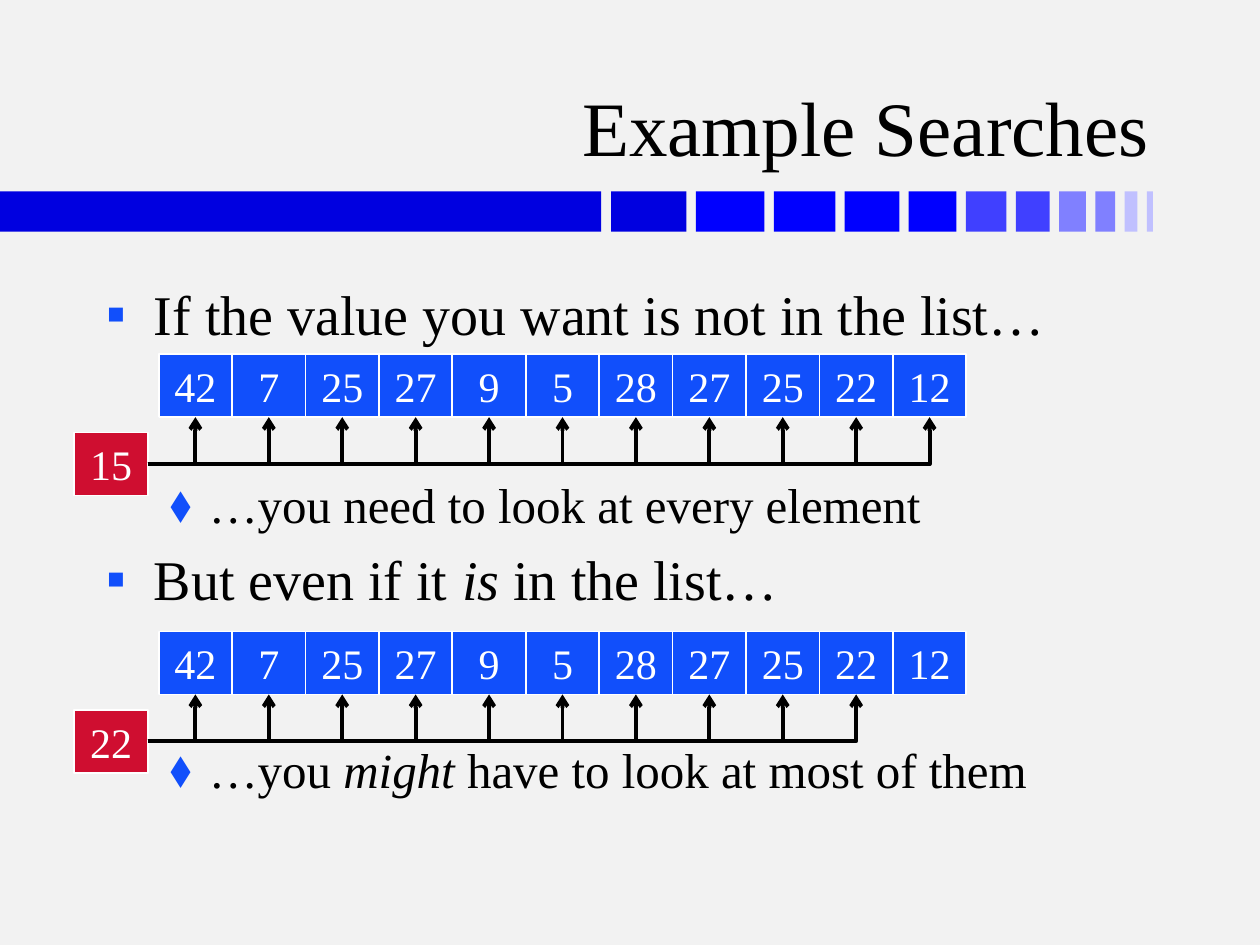
from dataclasses import dataclass

from lxml.etree import SubElement
from pptx import Presentation
from pptx.dml.color import RGBColor
from pptx.enum.shapes import MSO_CONNECTOR, MSO_SHAPE
from pptx.enum.text import MSO_ANCHOR, PP_ALIGN
from pptx.oxml.ns import qn
from pptx.util import Cm, Pt


@dataclass(frozen=True)
class Theme:
    font: str = "Times New Roman"
    background: str = "F2F2F2"
    ink: str = "000000"
    light: str = "FFFFFF"
    cell: str = "114FFB"
    key: str = "CF0E30"
    bar: str = "0000E0"
    fade: tuple = ("0000E0",) + ("0000FF",) * 4 + ("4040FF",) * 2 + ("8080FF",) * 2 + ("C0C0FF",) * 2
    title_size: int = 44
    item_sizes: tuple = (32, 28)
    cell_size: int = 24
    border_width: float = 1
    arrow_width: float = 2.25


class SlideBuilder:
    def __init__(self, page, theme):
        self.page = page
        self.theme = theme
        fill = page.background.fill
        fill.solid()
        fill.fore_color.rgb = RGBColor.from_string(theme.background)

    def style_font(self, para, size, color):
        para.font.name = self.theme.font
        para.font.size = Pt(size)
        para.font.color.rgb = RGBColor.from_string(color)

    def rectangle(self, left, top, width, height, color):
        box = self.page.shapes.add_shape(
            MSO_SHAPE.RECTANGLE, Cm(left), Cm(top), Cm(width), Cm(height))
        box.shadow.inherit = False
        box.fill.solid()
        box.fill.fore_color.rgb = RGBColor.from_string(color)
        box.line.fill.background()
        return box

    def number_box(self, left, top, value, color):
        box = self.rectangle(left, top, CELL_WIDTH, CELL_HEIGHT, color)
        box.line.color.rgb = RGBColor.from_string(self.theme.light)
        box.line.width = Pt(self.theme.border_width)
        frame = box.text_frame
        frame.word_wrap = False
        frame.vertical_anchor = MSO_ANCHOR.MIDDLE
        para = frame.paragraphs[0]
        para.text = str(value)
        para.alignment = PP_ALIGN.CENTER
        self.style_font(para, self.theme.cell_size, self.theme.light)
        return box

    def text_frame(self, left, top, width, height):
        box = self.page.shapes.add_textbox(Cm(left), Cm(top), Cm(width), Cm(height))
        box.text_frame.word_wrap = True
        return box.text_frame

    def title(self, text):
        frame = self.text_frame(1.88, 0.48, 21.54, 3.12)
        frame.vertical_anchor = MSO_ANCHOR.BOTTOM
        para = frame.paragraphs[0]
        para.text = text
        para.alignment = PP_ALIGN.RIGHT
        self.style_font(para, self.theme.title_size, self.theme.ink)

    def bullets(self, items):
        frame = self.text_frame(1.9, 5.51, 21.6, 11.43)
        for index, (level, space, spans) in enumerate(items):
            para = frame.add_paragraph() if index else frame.paragraphs[0]
            para.level = level
            para.space_before = Pt(space)
            self.style_font(para, self.theme.item_sizes[level], self.theme.ink)
            for position, text in enumerate(spans):
                span = para.add_run()
                span.text = text
                if position % 2:
                    span.font.italic = True
            self.bullet_mark(para, level)

    def bullet_mark(self, para, level):
        margin, indent, mark = ((0.95, -0.95, "▪"), (2.06, -0.79, "⬧"))[level]
        properties = para._p.get_or_add_pPr()
        properties.set("marL", str(Cm(margin)))
        properties.set("indent", str(Cm(indent)))
        color = SubElement(properties, qn("a:buClr"))
        SubElement(color, qn("a:srgbClr"), val=self.theme.cell)
        SubElement(properties, qn("a:buFont"), typeface=self.theme.font)
        SubElement(properties, qn("a:buChar"), char=mark)
        defaults = properties.find(qn("a:defRPr"))
        if defaults is not None:
            properties.append(defaults)

    def arrow(self, source, target):
        link = self.page.shapes.add_connector(MSO_CONNECTOR.ELBOW, 0, 0, 0, 0)
        link.begin_connect(source, 3)
        link.end_connect(target, 2)
        link.line.color.rgb = RGBColor.from_string(self.theme.ink)
        link.line.width = Pt(self.theme.arrow_width)
        properties = link._element.spPr
        properties.find(qn("a:prstGeom")).set("prst", "bentConnector2")
        SubElement(properties.find(qn("a:ln")), qn("a:tailEnd"), type="arrow")
        SubElement(properties, qn("a:effectLst"))

    def fading_bar(self):
        top, height, gap = 3.86, 0.81, 0.19
        self.rectangle(0, top, 12.12, height, self.theme.bar)
        left = 12.32
        for index, color in enumerate(self.theme.fade):
            width = 1.52 - 0.14 * index
            self.rectangle(left, top, width, height, color)
            left += width + gap

    def search(self, top, key, values, steps):
        cells = [self.number_box(3.2 + CELL_WIDTH * index, top, value, self.theme.cell)
                 for index, value in enumerate(values)]
        key_box = self.number_box(1.5, top + 1.58, key, self.theme.key)
        for cell in cells[:steps]:
            self.arrow(key_box, cell)


CELL_WIDTH, CELL_HEIGHT = 1.48, 1.27
VALUES = (42, 7, 25, 27, 9, 5, 28, 27, 25, 22, 12)
ITEM_SPACE, DIAGRAM_SPACE = 6.4, 73
ITEMS = (
    (0, ITEM_SPACE, ("If the value you want is not in the list…",)),
    (1, DIAGRAM_SPACE, ("…you need to look at every element",)),
    (0, ITEM_SPACE, ("But even if it ", "is", " in the list…")),
    (1, DIAGRAM_SPACE, ("…you ", "might", " have to look at most of them")),
)


def main():
    deck = Presentation()
    deck.slide_width, deck.slide_height = Cm(25.4), Cm(19.05)
    builder = SlideBuilder(deck.slides.add_slide(deck.slide_layouts[6]), Theme())
    builder.fading_bar()
    builder.title("Example Searches")
    builder.bullets(ITEMS)
    builder.search(7.14, 15, VALUES, len(VALUES))
    builder.search(12.73, 22, VALUES, VALUES.index(22) + 1)
    deck.save("out.pptx")


if __name__ == "__main__":
    main()
